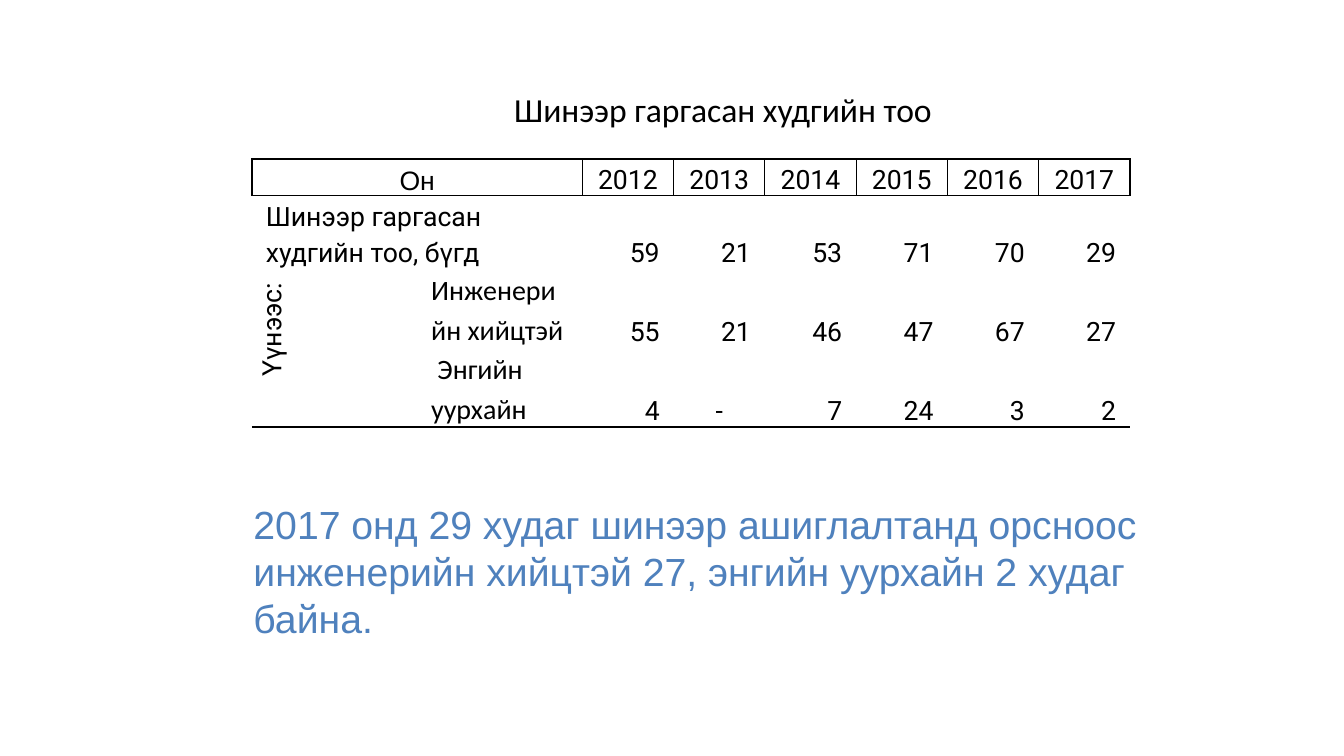
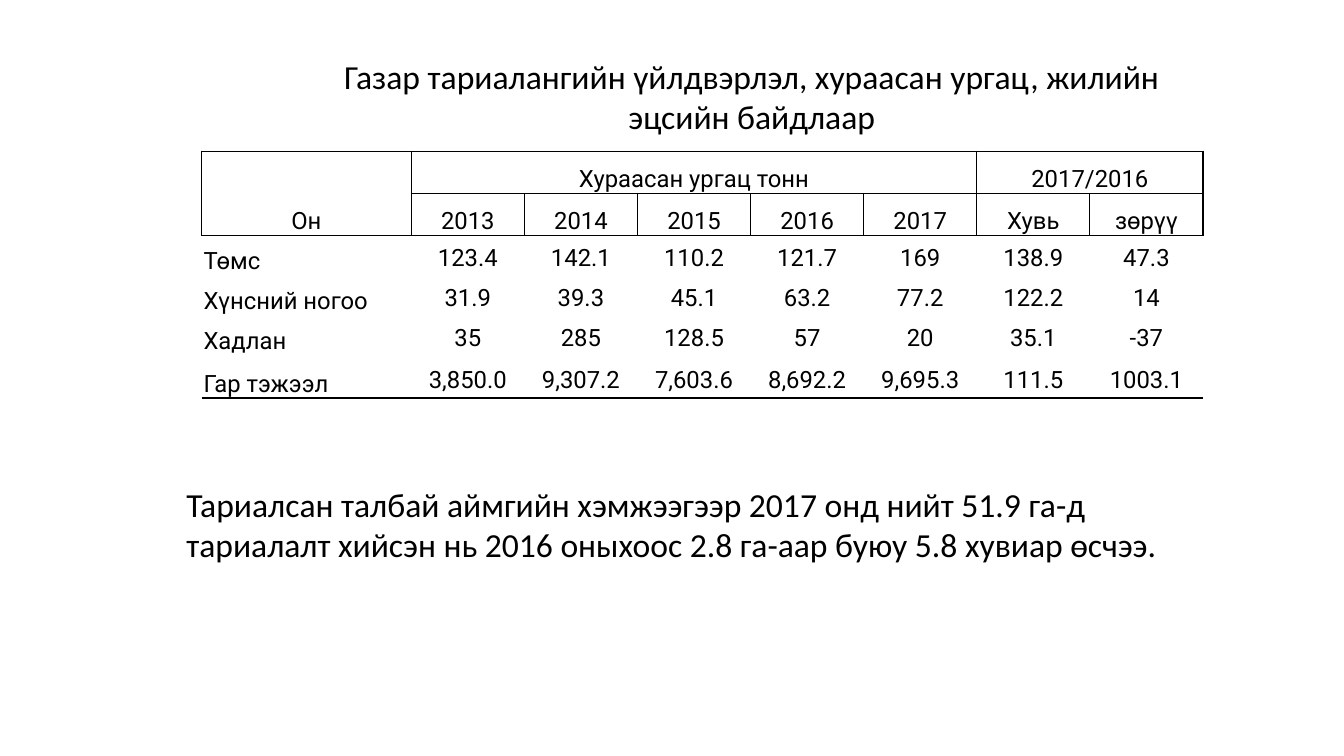
import pptx
import pptx.dml.color
import pptx.enum.text
import pptx.oxml.ns
import pptx.util
from lxml import etree

Pt = pptx.util.Pt
ALIGN = pptx.enum.text.PP_ALIGN
ANCHOR = pptx.enum.text.MSO_ANCHOR
BLACK = pptx.dml.color.RGBColor(0x00, 0x00, 0x00)
BLUE = pptx.dml.color.RGBColor(0x4F, 0x81, 0xBD)
HEADING_FONT = "Calibri"
TABLE_FONT = "Roboto"
NOTE_FONT = "Arial"
TITLE_ONLY = 5

WELL_ROWS = [
    ["Он", "", "2012", "2013", "2014", "2015", "2016", "2017"],
    ["Шинээр гаргасан худгийн тоо, бүгд", "", "59", "21", "53", "71", "70", "29"],
    ["Үүнээс:", "Инженерийн хийцтэй", "55", "21", "46", "47", "67", "27"],
    ["", " Энгийн уурхайн", "4", "-", "7", "24", "3", "2"],
]
HARVEST_ROWS = [
    ["Он", "Хураасан ургац тонн", "", "", "", "", "2017/2016", ""],
    ["", "2013", "2014", "2015", "2016", "2017", "Хувь", "зөрүү"],
    ["Төмс", "123.4", "142.1", "110.2", "121.7", "169", "138.9", "47.3"],
    ["Хүнсний ногоо", "31.9", "39.3", "45.1", "63.2", "77.2", "122.2", "14"],
    ["Хадлан", "35", "285", "128.5", "57", "20", "35.1", "-37"],
    ["Гар тэжээл", "3,850.0", "9,307.2", "7,603.6", "8,692.2", "9,695.3", "111.5", "1003.1"],
]


def style_paragraph(paragraph, font_name, size, color=BLACK, align=ALIGN.LEFT):
    paragraph.alignment = align
    for run in paragraph.runs:
        run.font.name = font_name
        run.font.size = Pt(size)
        run.font.color.rgb = color


def fill_frame(shape, box, text, font_name, size, color=BLACK, align=ALIGN.LEFT, wrap=True):
    shape.left, shape.top, shape.width, shape.height = map(Pt, box)
    frame = shape.text_frame
    frame.text = text
    frame.word_wrap = wrap
    frame.vertical_anchor = ANCHOR.TOP
    frame.auto_size = pptx.enum.text.MSO_AUTO_SIZE.SHAPE_TO_FIT_TEXT
    style_paragraph(frame.paragraphs[0], font_name, size, color, align)


def add_titled_slide(prs, title, box, **options):
    slide = prs.slides.add_slide(prs.slide_layouts[TITLE_ONLY])
    fill_frame(slide.shapes.title, box, title, HEADING_FONT, 24, **options)
    return slide


def add_note(slide, box, text, font_name, size, color=BLACK):
    note = slide.shapes.add_textbox(*map(Pt, box))
    fill_frame(note, box, text, font_name, size, color)


def set_borders(cell, black_sides):
    """Draw the named sides (L, R, T, B) in black and clear the others."""
    properties = cell._tc.get_or_add_tcPr()
    for side in "LRTB":
        line = etree.SubElement(properties, pptx.oxml.ns.qn(f"a:ln{side}"), w=str(Pt(1)))
        if side in black_sides:
            fill = etree.SubElement(line, pptx.oxml.ns.qn("a:solidFill"))
            etree.SubElement(fill, pptx.oxml.ns.qn("a:srgbClr"), val=str(BLACK))
        else:
            etree.SubElement(line, pptx.oxml.ns.qn("a:noFill"))


def border_sides(cell, row, header_rows, row_count):
    """Box the header cells and rule off the bottom of the table."""
    if row < header_rows:
        return "LRTB"
    sides = "T" if row == header_rows else ""
    if row + cell.span_height == row_count:
        sides += "B"
    return sides


def add_data_table(slide, left, top, widths, heights, rows, merges, header_rows, size, inset):
    """Add a table with bottom-anchored, centred text; merges are pairs of corner cells."""
    table = slide.shapes.add_table(
        len(rows), len(widths), Pt(left), Pt(top), Pt(sum(widths)), Pt(sum(heights))).table
    table.first_row = table.horz_banding = False
    for column, width in zip(table.columns, widths):
        column.width = Pt(width)
    for row, height in zip(table.rows, heights):
        row.height = Pt(height)
    for first, last in merges:
        table.cell(*first).merge(table.cell(*last))
    for r, texts in enumerate(rows):
        for c, text in enumerate(texts):
            cell = table.cell(r, c)
            set_borders(cell, border_sides(cell, r, header_rows, len(rows)))
            cell.fill.background()
            cell.margin_left = cell.margin_right = Pt(inset)
            cell.margin_top = cell.margin_bottom = 0
            cell.vertical_anchor = ANCHOR.BOTTOM
            cell.text = text
            paragraph = cell.text_frame.paragraphs[0]
            paragraph.line_spacing = 1.15
            style_paragraph(paragraph, TABLE_FONT, size, align=ALIGN.CENTER)
            paragraph.font.size = Pt(size)
    return table


def add_wells_slide(prs):
    slide = add_titled_slide(prs, "Шинээр гаргасан худгийн тоо", (360, 60, 316, 36), wrap=False)
    table = add_data_table(
        slide, 180, 113.6, [118] * 2 + [65.2] * 6, [25.6, 51.3, 56.4, 56.4], WELL_ROWS,
        [((0, 0), (0, 1)), ((1, 0), (1, 1)), ((2, 0), (3, 0))],
        header_rows=1, size=19, inset=10)
    style_paragraph(table.cell(0, 0).text_frame.paragraphs[0], NOTE_FONT, 19, align=ALIGN.CENTER)
    table.cell(1, 0).text_frame.paragraphs[0].alignment = ALIGN.LEFT
    for r in range(1, len(WELL_ROWS)):
        for c in range(2, len(WELL_ROWS[r])):
            if WELL_ROWS[r][c] != "-":
                table.cell(r, c).text_frame.paragraphs[0].alignment = ALIGN.RIGHT
    of_which = table.cell(2, 0)
    of_which.text_frame.paragraphs[0].alignment = ALIGN.RIGHT
    of_which._tc.get_or_add_tcPr().set("vert", "vert270")
    for r in (2, 3):
        well_kind = table.cell(r, 1)
        well_kind.vertical_anchor = ANCHOR.TOP
        paragraph = well_kind.text_frame.paragraphs[0]
        paragraph.space_after = Pt(10)
        style_paragraph(paragraph, HEADING_FONT, 20)
    add_note(slide, (174, 354, 648, 109),
             "2017 онд 29 худаг шинээр ашиглалтанд орсноос инженерийн хийцтэй 27, "
             "энгийн уурхайн 2 худаг байна.", NOTE_FONT, 28, BLUE)


def add_harvest_slide(prs):
    slide = add_titled_slide(
        prs, "Газар тариалангийн үйлдвэрлэл, хураасан ургац, жилийн эцсийн байдлаар",
        (234, 36, 606, 65.5), align=ALIGN.CENTER)
    header_rows = 2
    table = add_data_table(
        slide, 144, 108, [149.8] + [80.8] * 7, [30.2, 30.2, 28.6, 28.6, 28.6, 30.2],
        HARVEST_ROWS, [((0, 0), (1, 0)), ((0, 1), (0, 5)), ((0, 6), (0, 7))],
        header_rows=header_rows, size=17, inset=1.4)
    last_row, latest_year = len(HARVEST_ROWS) - 1, 5
    for r, texts in enumerate(HARVEST_ROWS):
        for c in range(len(texts)):
            cell = table.cell(r, c)
            paragraph = cell.text_frame.paragraphs[0]
            paragraph.space_after = Pt(10)
            if r < header_rows or r == last_row or c == latest_year:
                cell.margin_top = Pt(1.4)
            if r >= header_rows and c == 0:
                paragraph.alignment = ALIGN.LEFT
            elif r >= header_rows:
                cell.vertical_anchor = ANCHOR.MIDDLE
    add_note(slide, (126, 342, 714, 65.5),
             "Тариалсан талбай аймгийн хэмжээгээр 2017 онд нийт 51.9 га-д тариалалт хийсэн нь "
             "2016 оныхоос 2.8 га-аар буюу 5.8 хувиар өсчээ.", HEADING_FONT, 24)


def main():
    prs = pptx.Presentation()
    prs.slide_width, prs.slide_height = Pt(960), Pt(540)
    add_wells_slide(prs)
    add_harvest_slide(prs)
    prs.save("out.pptx")


if __name__ == "__main__":
    main()
